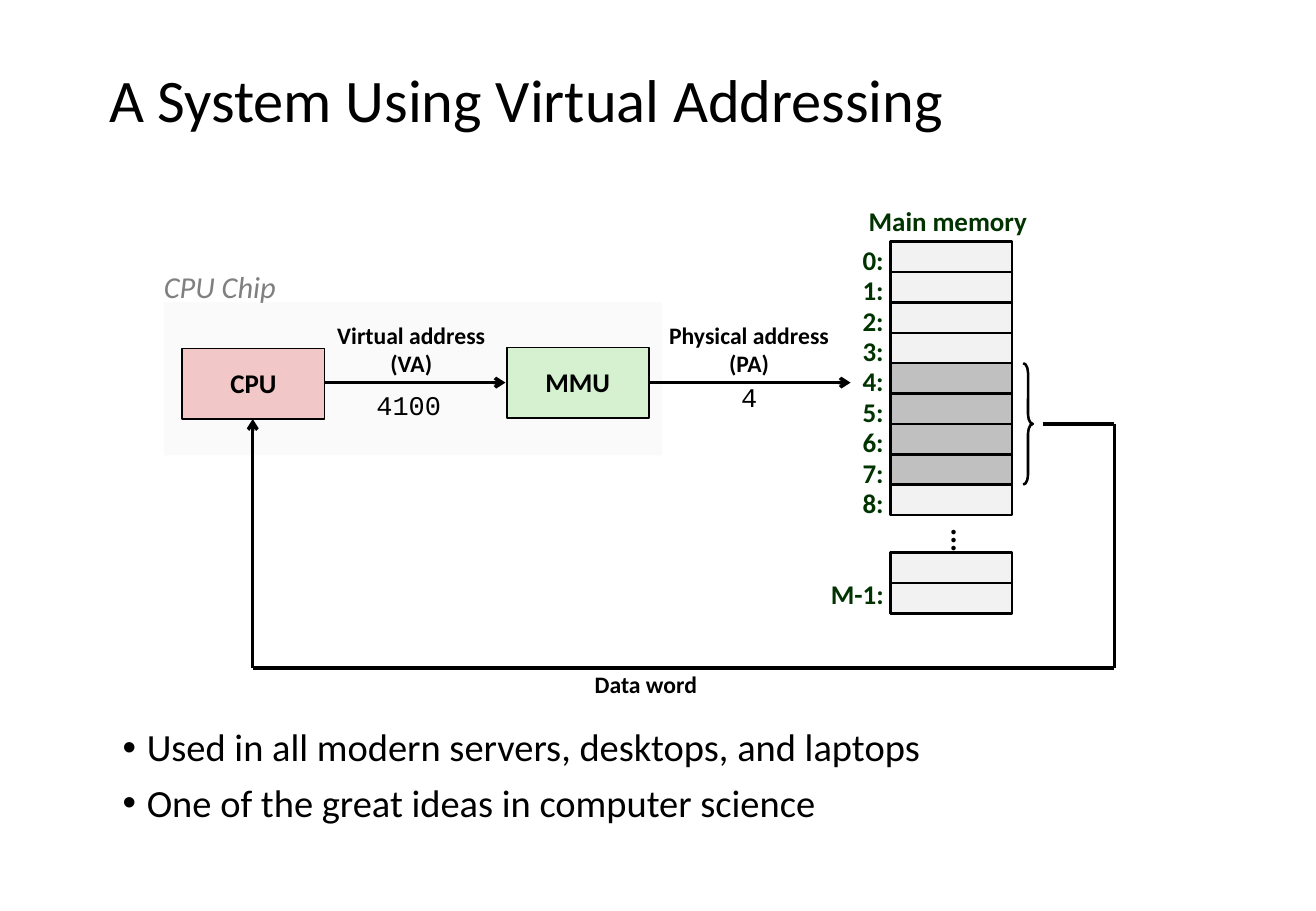
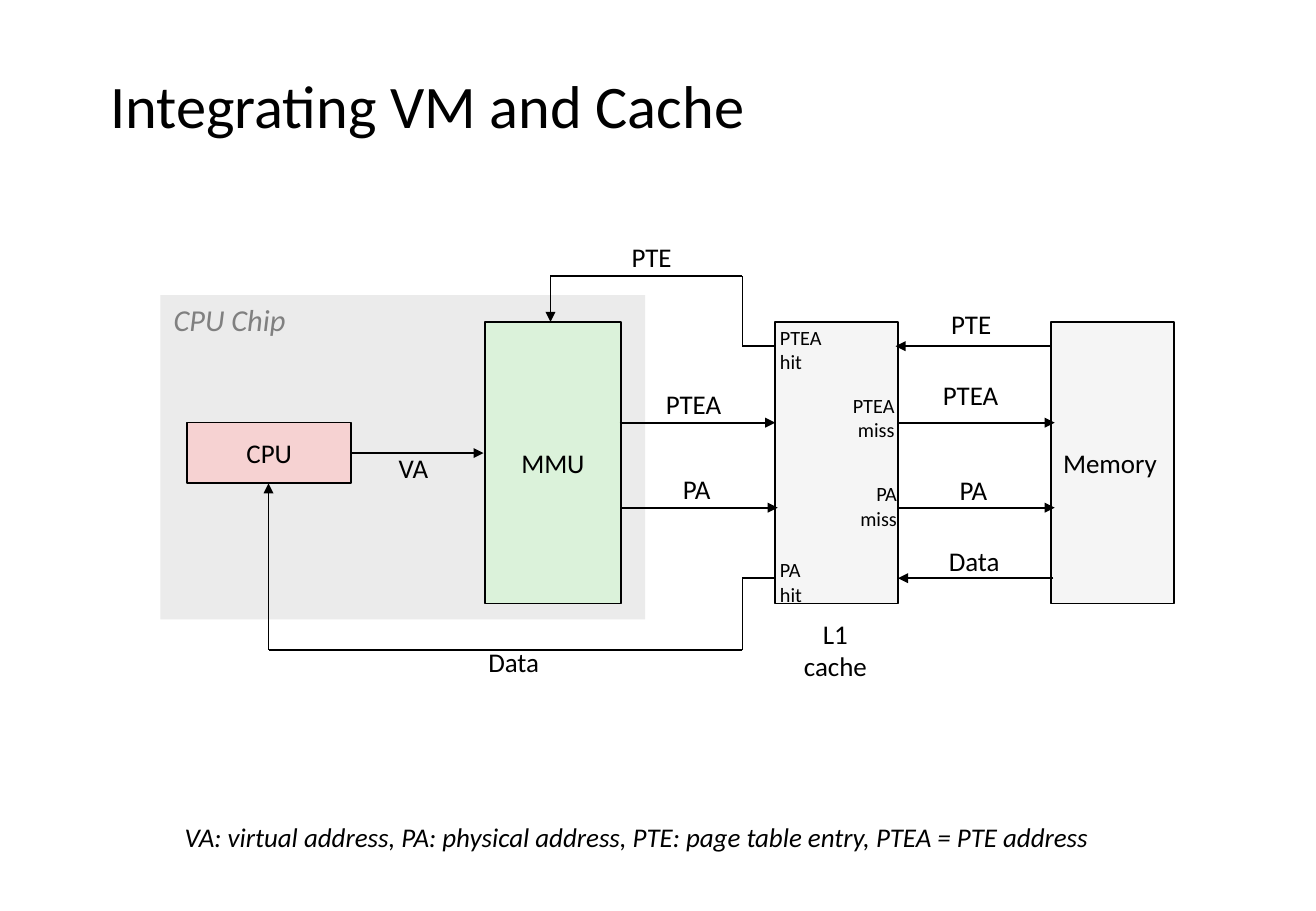
from itertools import pairwise

from lxml import etree
from pptx import Presentation
from pptx.dml.color import RGBColor
from pptx.enum.shapes import MSO_CONNECTOR, MSO_SHAPE as Shape
from pptx.enum.text import MSO_ANCHOR as Anchor, MSO_AUTO_SIZE, PP_ALIGN as Align
from pptx.oxml.ns import qn
from pptx.util import Inches, Pt

BLACK, GREY, DARK_GREEN = "000000", "808080", "003300"
FREE_CELL, USED_CELL, STORE_FILL = "F2F2F2", "C0C0C0", "F5F5F5"
SANS, MONO = "Calibri", "Courier New"
TIGHT = (0.07, 0.03)
ROW = 0.25


def colour(value):
    return RGBColor.from_string(value)


def inches(*values):
    return [Inches(value) for value in values]


def write(frame, lines, size=16, ink=BLACK, font=SANS, bold=False, italic=False,
          align=Align.LEFT, anchor=Anchor.TOP, spacing=1.0, before=0,
          margins=(0.1, 0.05), wrap=False):
    frame.word_wrap = wrap
    frame.vertical_anchor = anchor
    frame.margin_left = frame.margin_right = Inches(margins[0])
    frame.margin_top = frame.margin_bottom = Inches(margins[1])
    frame.text = lines
    for paragraph in frame.paragraphs:
        paragraph.alignment = align
        paragraph.line_spacing = spacing
        paragraph.space_before = Pt(before)
        paragraph.font.size = Pt(size)
        paragraph.font.name = font
        paragraph.font.bold = bold
        paragraph.font.italic = italic
        paragraph.font.color.rgb = colour(ink)


def label(slide, at, lines, **style):
    frame = slide.shapes.add_textbox(*inches(*at)).text_frame
    write(frame, lines, **style)
    frame.auto_size = MSO_AUTO_SIZE.SHAPE_TO_FIT_TEXT
    return frame


def title(slide, at, text):
    frame = slide.shapes.add_textbox(*inches(*at)).text_frame
    write(frame, text, size=35.8, anchor=Anchor.MIDDLE, spacing=0.9, wrap=True)


def chip_label(slide, at):
    label(slide, at, "CPU Chip", size=18, ink=GREY, italic=True)


def bullets(slide, at, lines):
    frame = slide.shapes.add_textbox(*inches(*at)).text_frame
    write(frame, lines, size=22.8, spacing=0.9, before=8.1, wrap=True)
    for paragraph in frame.paragraphs:
        properties = paragraph._p.get_or_add_pPr()
        properties.set("marL", str(Inches(0.2)))
        properties.set("indent", str(-Inches(0.2)))
        etree.SubElement(properties, qn("a:buFont"), typeface="Arial")
        etree.SubElement(properties, qn("a:buChar"), char="•")


def box(slide, at, fill=None, outline=None, text="", kind=Shape.RECTANGLE, **style):
    """Preset shape; outline is a line width in points, or None for no line."""
    shape = slide.shapes.add_shape(kind, *inches(*at))
    shape.shadow.inherit = False
    if fill:
        shape.fill.solid()
        shape.fill.fore_color.rgb = colour(fill)
    else:
        shape.fill.background()
    if outline:
        shape.line.width = Pt(outline)
        shape.line.color.rgb = colour(BLACK)
    else:
        shape.line.fill.background()
    if text:
        write(shape.text_frame, text, anchor=Anchor.MIDDLE,
              **{"align": Align.CENTER, **style})
    return shape


def route(slide, *points, width=1, head="triangle"):
    """Straight segments through the points, with a head on the last one."""
    for start, end in pairwise(points):
        line = slide.shapes.add_connector(MSO_CONNECTOR.STRAIGHT,
                                          *inches(*start, *end))
        line.line.width = Pt(width)
        line.line.color.rgb = colour(BLACK)
        if head and end == points[-1]:
            etree.SubElement(line.line._get_or_add_ln(), qn("a:tailEnd"), type=head)
        etree.SubElement(line._element.spPr, qn("a:effectLst"))


def main_memory(slide):
    left, top = 7.33, 1.99
    index_style = dict(ink=DARK_GREEN, bold=True, spacing=0.88, before=6)
    label(slide, (7.04, 1.67, 1.52, 0.34), "Main memory", align=Align.CENTER,
          **index_style)
    for index in range(9):
        y = top + index * ROW
        box(slide, (left, y, 1, ROW), USED_CELL if 4 <= index <= 7 else FREE_CELL, 1.5)
        label(slide, (7, y, 0.38, 0.34), f"{index}:", **index_style)
    for y in (4.55, 4.55 + ROW):
        box(slide, (left, y, 1, ROW), FREE_CELL, 1.5)
    label(slide, (6.74, 4.74, 0.64, 0.34), "M-1:", **index_style)

    ellipsis = slide.shapes.add_textbox(*inches(7.42, 4.25, 1, 0.25)).text_frame
    write(ellipsis, "...", size=18, bold=True, align=Align.CENTER,
          anchor=Anchor.MIDDLE, spacing=0.98)
    ellipsis._txBody.bodyPr.set("vert", "eaVert")

    brace = box(slide, (8.42, top + 4 * ROW, 0.08, 4 * ROW), outline=1.5,
                kind=Shape.RIGHT_BRACE)
    brace.adjustments[0], brace.adjustments[1] = 1, 0.5


def virtual_addressing(slide):
    box(slide, (1.35, 2.49, 4.1, 1.26), "FAFAFA")
    title(slide, (0.8, 0.42, 9.53, 0.86), "A System Using Virtual Addressing")
    bullets(slide, (0.91, 5.95, 9.09, 1.38),
            "Used in all modern servers, desktops, and laptops\n"
            "One of the great ideas in computer science")
    main_memory(slide)

    for x, y, name, fill in ((1.5, 2.87, "CPU", "F1C7C7"),
                             (4.17, 2.86, "MMU", "D5F1CF")):
        box(slide, (x, y, 1.17, 0.58), fill, 1, name, bold=True, spacing=0.98)
    for points in (
        [(2.67, 3.15), (4.16, 3.15)],
        [(5.33, 3.15), (7, 3.15)],
        [(8.58, 3.49), (9.17, 3.49), (9.17, 5.5), (2.08, 5.5), (2.08, 3.45)],
    ):
        route(slide, *points, width=2, head="arrow")

    for at, text in (
        ((2.67, 2.6, 1.43, 0.57), "Virtual address\n(VA)"),
        ((5.4, 2.6, 1.53, 0.57), "Physical address\n(PA)"),
        ((4.79, 5.47, 1.05, 0.34), "Data word"),
    ):
        label(slide, at, text, size=14, bold=True, align=Align.CENTER,
              anchor=Anchor.MIDDLE, spacing=0.98)
    label(slide, (3, 3.15, 0.74, 0.37), "4100", font=MONO)
    label(slide, (6, 3.08, 0.34, 0.37), "4", font=MONO)
    chip_label(slide, (1.25, 2.16, 1.16, 0.4))


def vm_and_cache(slide):
    box(slide, (1.32, 2.43, 3.99, 2.67), "EBEBEB")
    title(slide, (0.81, 0.48, 8.3, 0.83), "Integrating VM and Cache")
    chip_label(slide, (1.33, 2.43, 1.13, 0.4))

    top, height = 2.65, 2.32
    box(slide, (1.54, 3.48, 1.35, 0.5), "F6D2D2", 1, "CPU")
    box(slide, (3.99, top, 1.12, height), "DBF2DA", 1, "MMU")
    box(slide, (6.38, top, 1.01, height), STORE_FILL, 1)
    box(slide, (8.65, top, 1.01, height), STORE_FILL, 1, "Memory", align=Align.LEFT)

    pte_y, ptea_y, pa_y, data_y = 2.85, 3.48, 4.18, 4.76
    for points in (
        [(2.89, 3.73), (3.98, 3.73)],
        [(5.1, ptea_y), (6.38, ptea_y)],
        [(5.12, pa_y), (6.4, pa_y)],
        [(7.4, ptea_y), (8.68, ptea_y)],
        [(7.39, pa_y), (8.68, pa_y)],
        [(8.65, pte_y), (7.37, pte_y)],
        [(8.67, data_y), (7.39, data_y)],
        [(6.38, pte_y), (6.11, pte_y), (6.11, 2.27), (4.53, 2.27), (4.53, top)],
        [(6.38, data_y), (6.11, data_y), (6.11, 5.35), (2.21, 5.35), (2.21, 3.98)],
    ):
        route(slide, *points)

    for at, text in (
        ((3.21, 3.73, 0.39, 0.28), "VA"),
        ((5.41, 3.2, 0.62, 0.29), "PTEA"),
        ((5.55, 3.9, 0.38, 0.29), "PA"),
        ((7.69, 3.13, 0.62, 0.29), "PTEA"),
    ):
        label(slide, at, text, spacing=0.85, margins=TIGHT)
    for at, text in (
        ((5.1, 1.93, 0.54, 0.37), "PTE"),
        ((7.73, 2.48, 0.54, 0.37), "PTE"),
        ((7.8, 3.85, 0.44, 0.37), "PA"),
        ((7.71, 4.43, 0.64, 0.37), "Data"),
        ((3.92, 5.26, 0.64, 0.37), "Data"),
    ):
        label(slide, at, text, anchor=Anchor.MIDDLE)
    for at, text, align in (
        ((6.32, 2.63, 0.59, 0.5), "PTEA\nhit", Align.LEFT),
        ((6.91, 3.18, 0.55, 0.51), "PTEA\nmiss", Align.RIGHT),
        ((6.96, 3.91, 0.52, 0.51), "PA\nmiss", Align.RIGHT),
        ((6.32, 4.54, 0.41, 0.5), "PA\nhit", Align.LEFT),
    ):
        label(slide, at, text, size=12, align=align, anchor=Anchor.MIDDLE)
    label(slide, (6.51, 5.03, 0.73, 0.64), "L1\ncache", align=Align.CENTER,
          anchor=Anchor.MIDDLE)
    label(slide, (1.45, 6.77, 7.92, 0.29),
          "VA: virtual address, PA: physical address, "
          "PTE: page table entry, PTEA = PTE address",
          italic=True, spacing=0.85, margins=TIGHT)


def main():
    deck = Presentation()
    deck.slide_width, deck.slide_height = inches(10.83, 7.5)
    for build in (virtual_addressing, vm_and_cache):
        build(deck.slides.add_slide(deck.slide_layouts[6]))
    deck.save("out.pptx")


if __name__ == "__main__":
    main()
